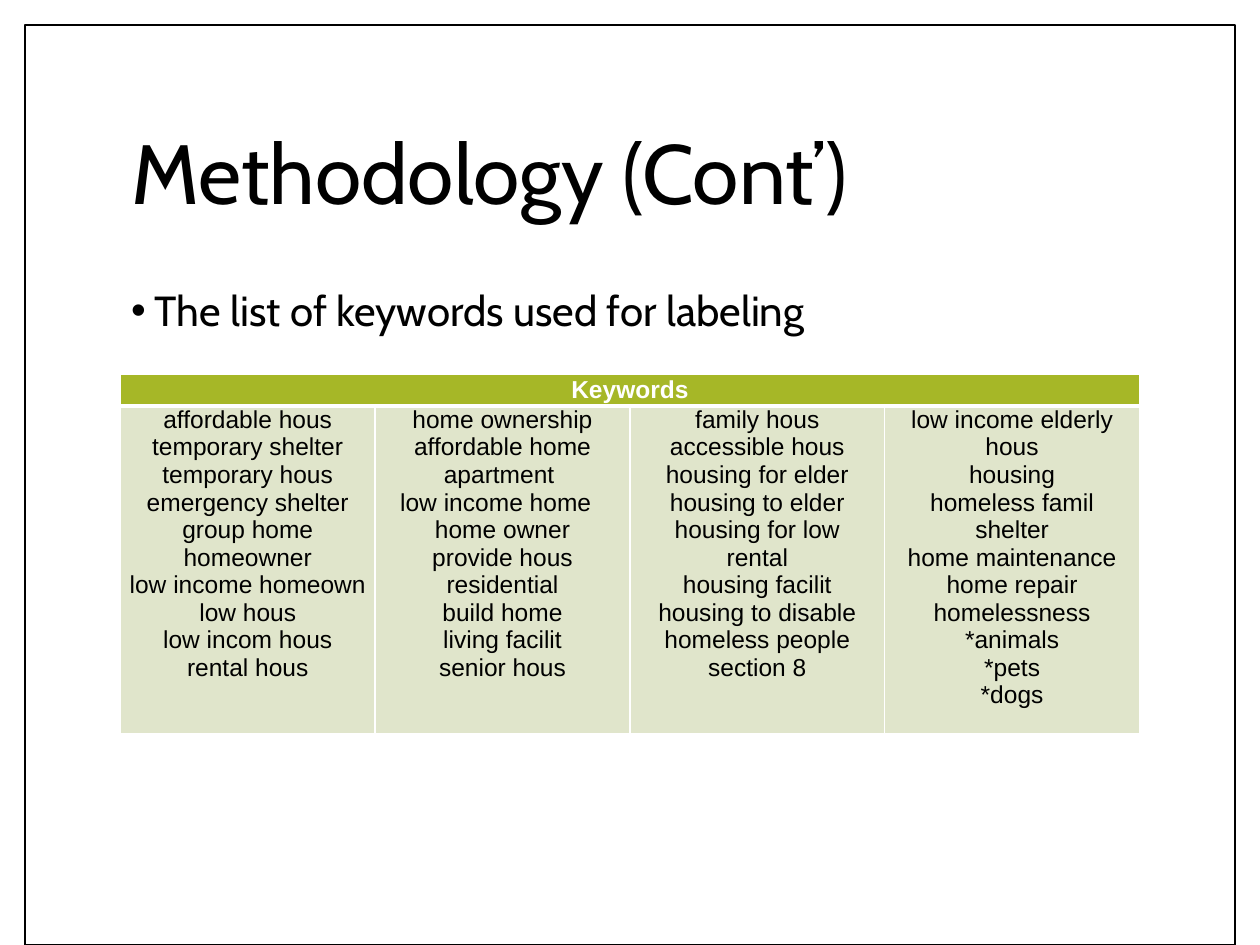
from dataclasses import dataclass

from lxml import etree
from pptx import Presentation
from pptx.dml.color import RGBColor
from pptx.enum.shapes import MSO_SHAPE
from pptx.enum.text import MSO_ANCHOR, PP_ALIGN
from pptx.oxml.ns import qn
from pptx.util import Pt

RECTANGLE = MSO_SHAPE.RECTANGLE
CENTER = PP_ALIGN.CENTER
LEFT = PP_ALIGN.LEFT
TOP = MSO_ANCHOR.TOP
MIDDLE = MSO_ANCHOR.MIDDLE


@dataclass(frozen=True)
class Theme:
    black: str = "000000"
    white: str = "FFFFFF"
    header: str = "A6B727"
    body: str = "E0E5CB"
    text_font: str = "Cabin"
    table_font: str = "Arial"
    title_size: int = 48
    bullet_size: int = 24
    table_size: int = 14


THEME = Theme()
KEYWORDS = [
    ["affordable hous", "temporary shelter", "temporary hous", "emergency shelter",
     "group home", "homeowner", "low income homeown", "low hous", "low incom hous",
     "rental hous"],
    ["home ownership", "affordable home", "apartment ", "low income home  ",
     "home owner", "provide hous", "residential", "build home", "living facilit",
     "senior hous"],
    ["family hous", "accessible hous", "housing for elder", "housing to elder",
     "housing for low", "rental", "housing facilit", "housing to disable",
     "homeless people", "section 8"],
    ["low income elderly hous", "housing", "homeless famil", "shelter",
     "home maintenance", "home repair", "homelessness", "*animals", "*pets", "*dogs"],
]


def color(value):
    return RGBColor.from_string(value)


def style_text(frame, font, size, ink, bold=False, align=LEFT):
    for para in frame.paragraphs:
        para.alignment = align
        for span in para.runs:
            span.font.name = font
            span.font.size = Pt(size)
            span.font.bold = bold
            span.font.color.rgb = color(ink)


def add_frame(page):
    frame = page.shapes.add_shape(RECTANGLE, Pt(14.4), Pt(14.4), Pt(691.2), Pt(525.6))
    frame.shadow.inherit = False
    frame.fill.solid()
    frame.fill.fore_color.rgb = color(THEME.white)
    frame.line.color.rgb = color(THEME.black)
    frame.line.width = Pt(1)


def add_text(page, text, top, height, size, anchor):
    box = page.shapes.add_textbox(Pt(67.8), Pt(top), Pt(583.2), Pt(height))
    frame = box.text_frame
    frame.word_wrap = True
    frame.vertical_anchor = anchor
    frame.text = text
    para = frame.paragraphs[0]
    para.line_spacing = 0.9
    style_text(frame, THEME.text_font, size, THEME.black)
    return para


def add_bullet(para):
    para.space_before = Pt(10)
    properties = para._p.get_or_add_pPr()
    properties.set("marL", str(Pt(13.5)))
    properties.set("indent", str(Pt(-15)))
    etree.SubElement(properties, qn("a:buFont"), typeface="Arial")
    etree.SubElement(properties, qn("a:buChar"), char="•")


def add_borders(cell, bottom):
    properties = cell._tc.get_or_add_tcPr()
    for side, width in {"L": 1, "R": 1, "T": 1, "B": bottom}.items():
        border = etree.SubElement(properties, qn(f"a:ln{side}"), w=str(Pt(width)))
        fill = etree.SubElement(border, qn("a:solidFill"))
        etree.SubElement(fill, qn("a:srgbClr"), val=THEME.white)


def fill_cell(cell, text, fill, ink, bold=False, anchor=TOP, bottom=1):
    add_borders(cell, bottom)
    cell.fill.solid()
    cell.fill.fore_color.rgb = color(fill)
    cell.margin_left = cell.margin_right = Pt(3.6)
    cell.margin_top = cell.margin_bottom = 0
    cell.vertical_anchor = anchor
    cell.text_frame.text = text
    style_text(cell.text_frame, THEME.table_font, THEME.table_size, ink, bold, CENTER)


def add_keyword_table(page):
    count = len(KEYWORDS)
    table = page.shapes.add_table(
        2, count, Pt(68.8), Pt(214.1), Pt(582.4), Pt(205.2)).table
    table.horz_banding = False
    table.rows[0].height = Pt(18)
    table.rows[1].height = Pt(187.2)
    for index, words in enumerate(KEYWORDS):
        fill_cell(table.cell(0, index), "" if index else "Keywords", THEME.header,
                  THEME.white, bold=True, anchor=MIDDLE, bottom=3)
        fill_cell(table.cell(1, index), "\n".join(words), THEME.body, THEME.black)
    table.cell(0, 0).merge(table.cell(0, count - 1))


def main():
    deck = Presentation()
    deck.slide_width, deck.slide_height = Pt(720), Pt(540)
    page = deck.slides.add_slide(deck.slide_layouts[6])
    add_frame(page)
    add_text(page, "Methodology (Cont’)", 48.2, 106.6, THEME.title_size, MIDDLE)
    add_bullet(add_text(page, "The list of keywords used for labeling",
                        162, 318.2, THEME.bullet_size, TOP))
    add_keyword_table(page)
    deck.save("out.pptx")


if __name__ == "__main__":
    main()
